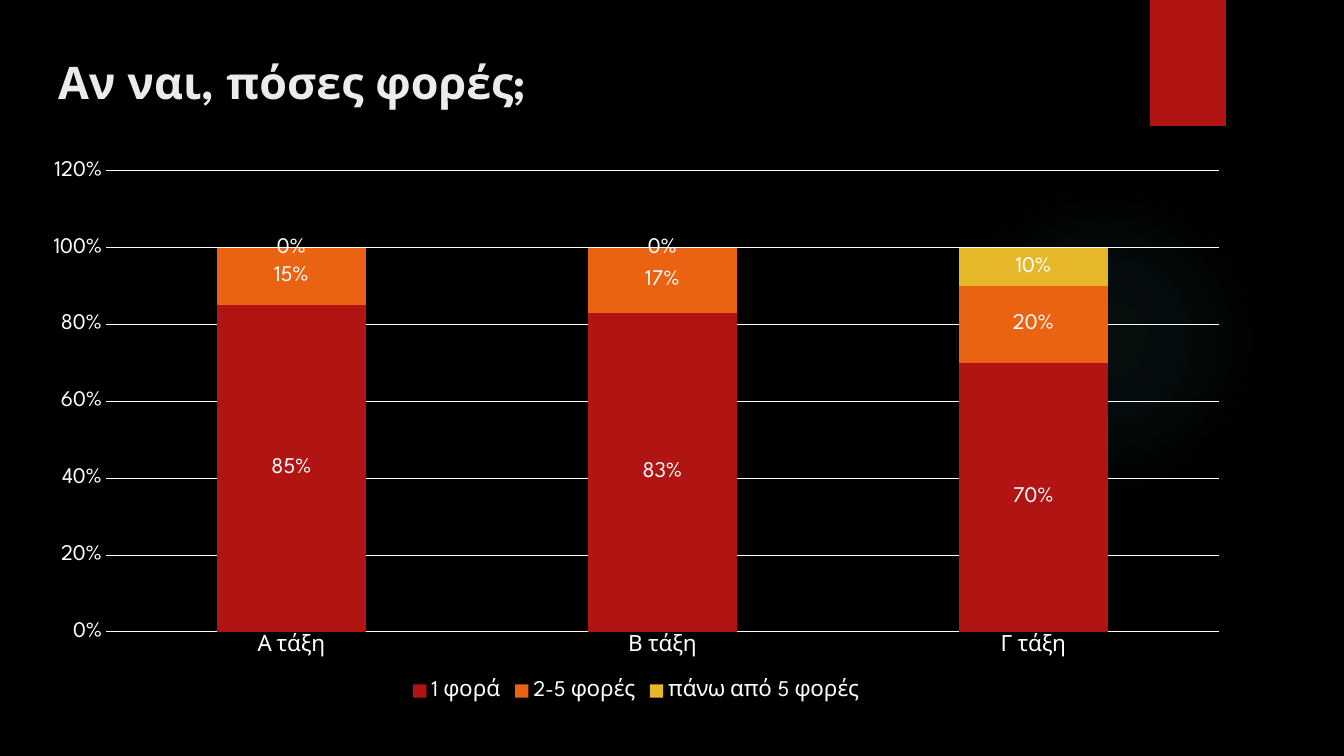
from pptx import Presentation
from pptx.chart.data import CategoryChartData
from pptx.dml.color import RGBColor
from pptx.enum.chart import (XL_CHART_TYPE as CT, XL_LABEL_POSITION as LP,
                             XL_LEGEND_POSITION as LEG, XL_TICK_MARK as TM)
from pptx.enum.shapes import MSO_SHAPE as SHAPE
from pptx.enum.text import MSO_ANCHOR, PP_ALIGN
from pptx.oxml import parse_xml
from pptx.oxml.ns import nsdecls, qn
from pptx.util import Pt

# Content
TITLE = "Αν ναι, πόσες φορές;"
GRADES = ["Α τάξη", "Β τάξη", "Γ τάξη"]
SERIES = [  # name, values, colour key
    ("1 φορά", (0.85, 0.83, 0.7), "red"),
    ("2-5 φορές", (0.15, 0.17, 0.2), "orange"),
    ("πάνω από 5 φορές", (0, 0, 0.1), "yellow"),
]
FONT = "League Spartan"
COLORS = {"back": "000000", "title": "EBEBEB", "text": "FFFFFF", "glow": "50B9C1",
          "red": "B01513", "orange": "EA6312", "yellow": "E6B729"}
GLOW_STOPS = [(0, 7), (36, 6), (69, 0)]  # position %, opacity %

# Boxes in px: left, top, width, height
SLIDE_W, SLIDE_H = 1344, 756
GLOW = (949, 184, 310, 310)
TAB = (1150, 0, 76, 126)
TITLE_BOX = (48, 50, 1097, 154)
CHART = (29, 149, 1214, 557)
PLOT = (106, 171, 1113, 461)
EMU_PER_PX = 12192000 / SLIDE_W


def emu(*px):
    return [round(v * EMU_PER_PX) for v in px]


def rgb(key):
    return RGBColor.from_string(COLORS[key])


def style(font, size, color, bold=False):
    font.name, font.size, font.bold = FONT, Pt(size), bold
    font.color.rgb = rgb(color)


def add_plain(slide, kind, box):
    sp = slide.shapes.add_shape(kind, *emu(*box))
    sp.shadow.inherit = False
    sp.line.fill.background()
    return sp


prs = Presentation()
prs.slide_width, prs.slide_height = emu(SLIDE_W, SLIDE_H)
slide = prs.slides.add_slide(prs.slide_layouts[5])
slide.background.fill.solid()
slide.background.fill.fore_color.rgb = rgb("back")

# Soft round glow
glow = add_plain(slide, SHAPE.OVAL, GLOW)
glow.fill.background()
stops = "".join(
    f'<a:gs pos="{pos * 1000}"><a:srgbClr val="{COLORS["glow"]}">'
    f'<a:alpha val="{alpha * 1000}"/></a:srgbClr></a:gs>' for pos, alpha in GLOW_STOPS)
spPr = glow._element.spPr
spPr.replace(spPr.find(qn("a:noFill")), parse_xml(
    f'<a:gradFill {nsdecls("a")}><a:gsLst>{stops}</a:gsLst><a:path path="circle">'
    '<a:fillToRect l="50000" t="50000" r="50000" b="50000"/></a:path></a:gradFill>'))

# Red tab
tab = add_plain(slide, SHAPE.RECTANGLE, TAB)
tab.fill.solid()
tab.fill.fore_color.rgb = rgb("red")

# Title
title = slide.shapes.title
title.left, title.top, title.width, title.height = emu(*TITLE_BOX)
tf = title.text_frame
tf.word_wrap = True
tf.vertical_anchor = MSO_ANCHOR.TOP
p = tf.paragraphs[0]
p.alignment = PP_ALIGN.LEFT
r = p.add_run()
r.text = TITLE
style(r.font, 32, "title", bold=True)

# Stacked column chart
data = CategoryChartData(number_format="0%")
data.categories = GRADES
for name, values, _ in SERIES:
    data.add_series(name, values)
chart = slide.shapes.add_chart(CT.COLUMN_STACKED, *emu(*CHART), data).chart
style(chart.font, 16, "text")
chart.has_title = False
chart.has_legend = True
chart.legend.position = LEG.BOTTOM
chart.legend.include_in_layout = False
style(chart.legend.font, 16, "text")

plot = chart.plots[0]
plot.gap_width, plot.overlap, plot.vary_by_categories = 150, 100, False
for series, (_, _, color) in zip(plot.series, SERIES):
    series.format.fill.solid()
    series.format.fill.fore_color.rgb = rgb(color)
    labels = series.data_labels
    labels.show_value = True
    labels.number_format, labels.number_format_is_linked = "0%", False
    labels.position = LP.CENTER
    style(labels.font, 16, "text")

# Axes
for axis in (chart.category_axis, chart.value_axis):
    axis.major_tick_mark = axis.minor_tick_mark = TM.NONE
    axis.format.line.fill.background()
    style(axis.tick_labels.font, 16, "text")
val_axis = chart.value_axis
val_axis.minimum_scale, val_axis.maximum_scale, val_axis.major_unit = 0, 1.2, 0.2
val_axis.tick_labels.number_format = "0%"
val_axis.tick_labels.number_format_is_linked = False
val_axis.has_major_gridlines = True
grid = val_axis.major_gridlines.format.line
grid.color.rgb = rgb("text")
grid.width = Pt(0.75)

# Plot area as fractions of the chart frame
left, top, width, height = CHART
fractions = {"x": (PLOT[0] - left) / width, "y": (PLOT[1] - top) / height,
             "w": PLOT[2] / width, "h": PLOT[3] / height}
modes = "".join(f'<c:{k}Mode val="edge"/>' for k in "xy")
sizes = "".join(f'<c:{k} val="{v:.4f}"/>' for k, v in fractions.items())
plot_area = chart._chartSpace.chart.plotArea
for old in plot_area.findall(qn("c:layout")):
    plot_area.remove(old)
plot_area.insert(0, parse_xml(
    f'<c:layout {nsdecls("c")}><c:manualLayout><c:layoutTarget val="inner"/>'
    f'{modes}{sizes}</c:manualLayout></c:layout>'))

prs.save("out.pptx")
